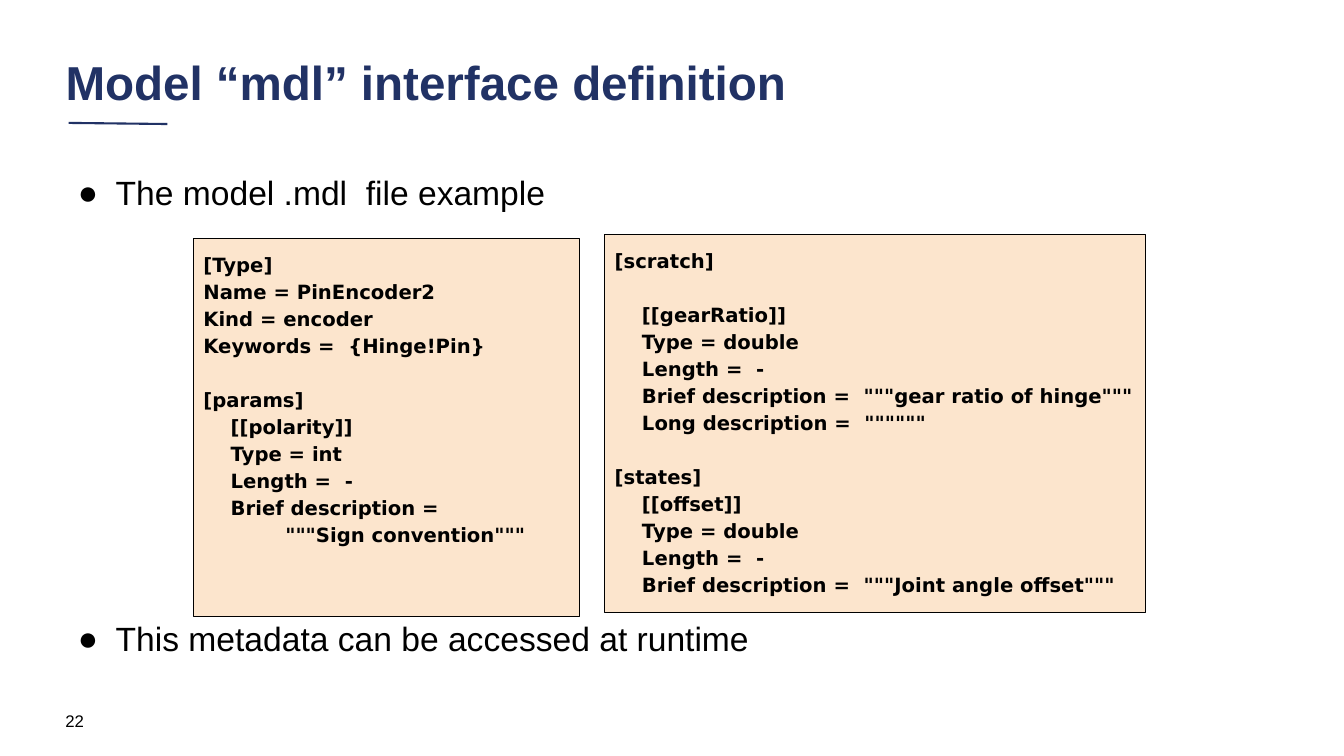
from dataclasses import dataclass

from lxml.etree import SubElement
from pptx import Presentation
from pptx.dml.color import RGBColor
from pptx.enum.shapes import MSO_CONNECTOR, MSO_SHAPE
from pptx.enum.text import MSO_ANCHOR, MSO_AUTO_SIZE, PP_ALIGN
from pptx.oxml.ns import qn
from pptx.util import Pt


@dataclass(frozen=True)
class Theme:
    navy: RGBColor = RGBColor(0x21, 0x32, 0x65)
    black: RGBColor = RGBColor(0, 0, 0)
    peach: RGBColor = RGBColor(0xFC, 0xE5, 0xCD)
    text_font: str = "Arial"
    code_font: str = "DejaVu Sans"
    title_size: int = 34
    body_size: int = 24
    code_size: int = 14
    number_size: int = 12


TYPE_AND_PARAMS = [
    ["[Type]", "Name = PinEncoder2", "Kind = encoder", "Keywords =  {Hinge!Pin}"],
    ["[params]", "    [[polarity]]", "    Type = int", "    Length =  -",
     "    Brief description =", '            """Sign convention"""'],
]
SCRATCH_AND_STATES = [
    ["[scratch]"],
    ["    [[gearRatio]]", "    Type = double", "    Length =  -",
     '    Brief description =  """gear ratio of hinge"""',
     '    Long description =  """"""'],
    ["[states]", "    [[offset]]", "    Type = double", "    Length =  -",
     '    Brief description =  """Joint angle offset"""'],
]


class SlideBuilder:
    def __init__(self, slide, theme):
        self.slide = slide
        self.theme = theme

    def style(self, paragraph, size, color, font=None, bold=False, spacing=1.0):
        paragraph.alignment = PP_ALIGN.LEFT
        paragraph.line_spacing = spacing
        paragraph.space_before = Pt(0)
        for run in paragraph.runs:
            run.font.name = font or self.theme.text_font
            run.font.size = Pt(size)
            run.font.bold = bold
            run.font.color.rgb = color

    def frame(self, shape, anchor, vertical_inset=3.6):
        text_frame = shape.text_frame
        text_frame.word_wrap = True
        text_frame.auto_size = MSO_AUTO_SIZE.NONE
        text_frame.vertical_anchor = anchor
        text_frame.margin_left = text_frame.margin_right = Pt(7.2)
        text_frame.margin_top = text_frame.margin_bottom = Pt(vertical_inset)
        return text_frame

    def text_box(self, left, top, width, height, anchor):
        box = self.slide.shapes.add_textbox(Pt(left), Pt(top), Pt(width), Pt(height))
        return self.frame(box, anchor)

    def title(self, text, left, top, width, height):
        title = self.slide.shapes.title
        title.left, title.top = Pt(left), Pt(top)
        title.width, title.height = Pt(width), Pt(height)
        text_frame = self.frame(title, MSO_ANCHOR.MIDDLE)
        text_frame.text = text
        self.style(text_frame.paragraphs[0], self.theme.title_size, self.theme.navy,
                   bold=True, spacing=0.9)

    def rule(self, start_x, start_y, end_x, end_y):
        line = self.slide.shapes.add_connector(
            MSO_CONNECTOR.STRAIGHT, Pt(start_x), Pt(start_y), Pt(end_x), Pt(end_y))
        line.line.color.rgb = self.theme.navy
        line.line.width = Pt(1.5)
        SubElement(line.element.spPr, qn("a:effectLst"))

    def bullets(self, texts, left, top, width, height, gap):
        text_frame = self.text_box(left, top, width, height, MSO_ANCHOR.TOP)
        text_frame.text = "\n".join(texts)
        for index, paragraph in enumerate(text_frame.paragraphs):
            properties = paragraph._p.get_or_add_pPr()
            properties.set("marL", str(Pt(36)))
            properties.set("indent", str(Pt(-27)))
            SubElement(properties, qn("a:buFont"), typeface=self.theme.text_font)
            SubElement(properties, qn("a:buChar"), char="●")
            self.style(paragraph, self.theme.body_size, self.theme.black, spacing=0.9)
            if index:
                paragraph.space_before = Pt(gap)

    def code_panel(self, sections, left, top, width, height):
        """Draw a framed listing with one line of space between sections."""
        panel = self.slide.shapes.add_shape(
            MSO_SHAPE.RECTANGLE, Pt(left), Pt(top), Pt(width), Pt(height))
        panel.shadow.inherit = False
        panel.fill.solid()
        panel.fill.fore_color.rgb = self.theme.peach
        panel.line.color.rgb = self.theme.black
        panel.line.width = Pt(0.75)
        text_frame = self.frame(panel, MSO_ANCHOR.TOP, vertical_inset=7.2)
        text_frame.text = "\n".join(line for section in sections for line in section)
        paragraphs = iter(text_frame.paragraphs)
        for section_index, section in enumerate(sections):
            for line_index in range(len(section)):
                paragraph = next(paragraphs)
                self.style(paragraph, self.theme.code_size, self.theme.black,
                           self.theme.code_font, bold=True, spacing=1.15)
                if section_index and line_index == 0:
                    paragraph.space_before = Pt(19.3)

    def page_number(self, text, left, top, width, height):
        text_frame = self.text_box(left, top, width, height, MSO_ANCHOR.MIDDLE)
        text_frame.text = text
        self.style(text_frame.paragraphs[0], self.theme.number_size, self.theme.black)


def main():
    presentation = Presentation()
    presentation.slide_width, presentation.slide_height = Pt(960), Pt(540)
    slide = presentation.slides.add_slide(presentation.slide_layouts[5])
    builder = SlideBuilder(slide, Theme())

    margin = 39.6
    builder.rule(49, 87.8, 119.5, 88.6)
    builder.page_number("22", margin, 500.4, 216, 28.8)
    builder.title("Model “mdl” interface definition", margin, 33.1, 800.6, 54.7)
    builder.bullets(
        ["The model .mdl  file example", "This metadata can be accessed at runtime"],
        margin, 122.4, 881.3, 370.8, gap=293)
    builder.code_panel(TYPE_AND_PARAMS, 138.2, 170.6, 275.8, 270)
    builder.code_panel(SCRATCH_AND_STATES, 432, 167.8, 386.6, 270)
    presentation.save("out.pptx")


if __name__ == "__main__":
    main()
